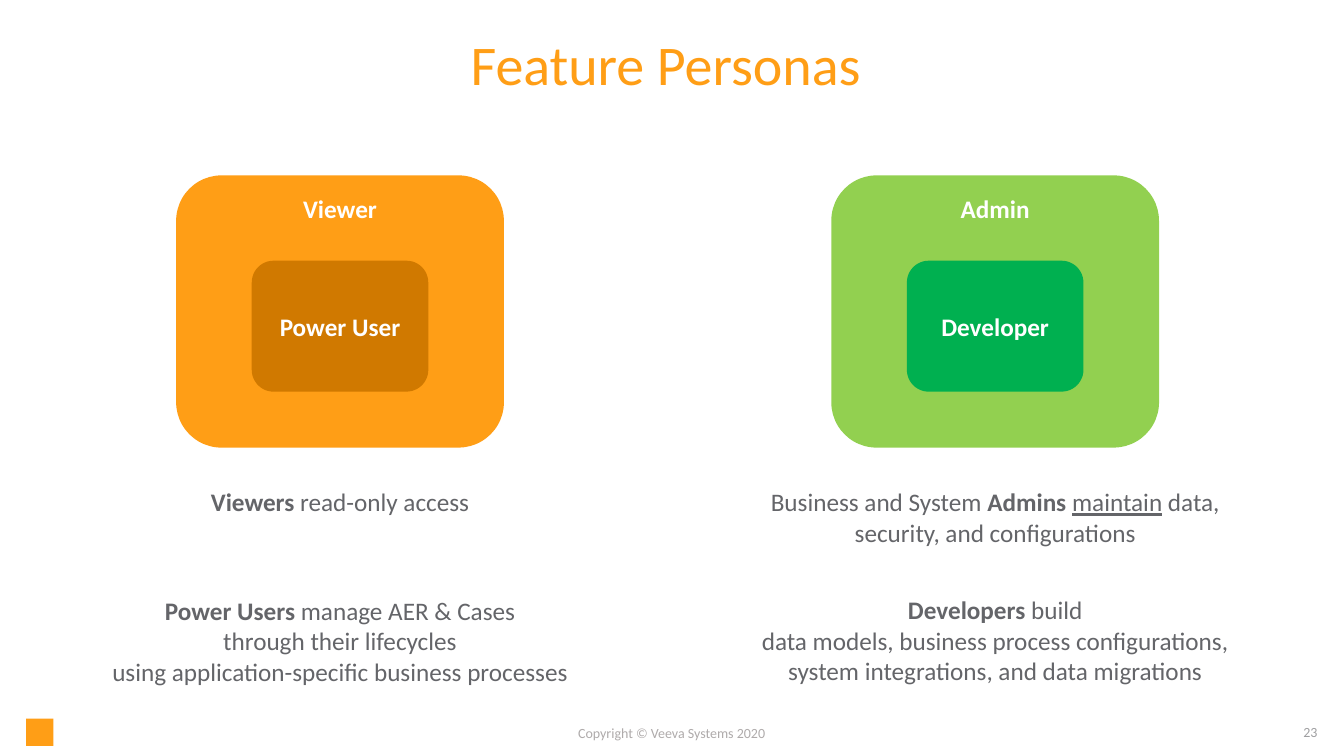
from pptx import Presentation
from pptx.dml.color import RGBColor
from pptx.enum.shapes import MSO_SHAPE as Shape
from pptx.enum.text import MSO_ANCHOR as Anchor, PP_ALIGN as Align
from pptx.util import Cm, Pt

ORANGE = RGBColor(0xFF, 0x9E, 0x16)
BROWN = RGBColor(0xD0, 0x79, 0x00)
LIME = RGBColor(0x92, 0xD0, 0x50)
GREEN = RGBColor(0x00, 0xB0, 0x50)
WHITE = RGBColor(0xFF, 0xFF, 0xFF)
BODY_GRAY = RGBColor(0x64, 0x65, 0x69)
NUMBER_GRAY = RGBColor(0x9F, 0x9F, 0xA1)
FOOTER_GRAY = RGBColor(0xAF, 0xAB, 0xAB)

PLAIN, BOLD, UNDERLINE = "plain", "bold", "underline"

VIEWER_LINES = [
    (0, [("Viewers", BOLD), (" read-only access", PLAIN)]),
    (56, [("Power Users", BOLD), (" manage AER & Cases", PLAIN)]),
    (0, [("through their lifecycles", PLAIN)]),
    (0, [("using application-specific business processes", PLAIN)]),
]
ADMIN_LINES = [
    (0, [("Business and System ", PLAIN), ("Admins ", BOLD),
         ("maintain", UNDERLINE), (" data,", PLAIN)]),
    (0, [("security, and configurations", PLAIN)]),
    (34, [("Developers", BOLD), (" build", PLAIN)]),
    (0, [("data models, business process configurations,", PLAIN)]),
    (0, [("system integrations, and data migrations", PLAIN)]),
]


def style(paragraph, size, color, align=Align.CENTER):
    paragraph.alignment = align
    paragraph.font.name = "Calibri"
    paragraph.font.size = Pt(size)
    paragraph.font.color.rgb = color


def add_label(slide, text, left, top, width, height, size, color,
              align=Align.CENTER, anchor=Anchor.TOP):
    frame = slide.shapes.add_textbox(Cm(left), Cm(top), Cm(width), Cm(height)).text_frame
    frame.word_wrap = True
    frame.vertical_anchor = anchor
    label = frame.paragraphs[0]
    label.text = text
    style(label, size, color, align)
    return label


def add_block(slide, kind, left, top, width, height, fill):
    block = slide.shapes.add_shape(kind, Cm(left), Cm(top), Cm(width), Cm(height))
    block.shadow.inherit = False
    block.fill.solid()
    block.fill.fore_color.rgb = fill
    block.line.fill.background()
    return block


def add_persona(slide, name, center, top, width, height, fill, anchor):
    persona = add_block(slide, Shape.ROUNDED_RECTANGLE,
                        center - width / 2, top, width, height, fill)
    persona.text_frame.vertical_anchor = anchor
    title = persona.text_frame.paragraphs[0]
    title.text = name
    style(title, 18, WHITE)
    title.font.bold = True


def add_description(slide, lines, center):
    width = 12.3
    frame = slide.shapes.add_textbox(
        Cm(center - width / 2), Cm(12.14), Cm(width), Cm(5.31)).text_frame
    frame.word_wrap = False
    for index, (space_before, pieces) in enumerate(lines):
        line = frame.add_paragraph() if index else frame.paragraphs[0]
        style(line, 18, BODY_GRAY)
        if space_before:
            line.space_before = Pt(space_before)
        for text, emphasis in pieces:
            piece = line.add_run()
            piece.text = text
            if emphasis == BOLD:
                piece.font.bold = True
            elif emphasis == UNDERLINE:
                piece.font.underline = True


def add_column(slide, center, outer, inner, lines):
    outer_name, outer_fill = outer
    inner_name, inner_fill = inner
    add_persona(slide, outer_name, center, 4.42, 8.26, 6.86, outer_fill, Anchor.TOP)
    add_persona(slide, inner_name, center, 6.57, 4.45, 3.3, inner_fill, Anchor.MIDDLE)
    add_description(slide, lines, center)


def main():
    deck = Presentation()
    deck.slide_width, deck.slide_height = Cm(33.87), Cm(19.05)
    slide = deck.slides.add_slide(deck.slide_layouts[6])

    add_block(slide, Shape.RECTANGLE, 0.66, 18.11, 0.69, 0.69, ORANGE)
    add_label(slide, "23", 30.61, 18.11, 2.84, 0.69, 10, NUMBER_GRAY, Align.RIGHT)
    add_label(slide, "Copyright © Veeva Systems 2020",
              12.19, 18.14, 9.47, 0.69, 10, FOOTER_GRAY)
    heading = add_label(slide, "Feature Personas", 0.76, 0.28, 32.03, 3.05,
                        40, ORANGE, anchor=Anchor.MIDDLE)
    heading.line_spacing = 0.7

    add_column(slide, 8.57, ("Viewer", ORANGE), ("Power User", BROWN), VIEWER_LINES)
    add_column(slide, 25.08, ("Admin", LIME), ("Developer", GREEN), ADMIN_LINES)

    deck.save("out.pptx")


if __name__ == "__main__":
    main()
